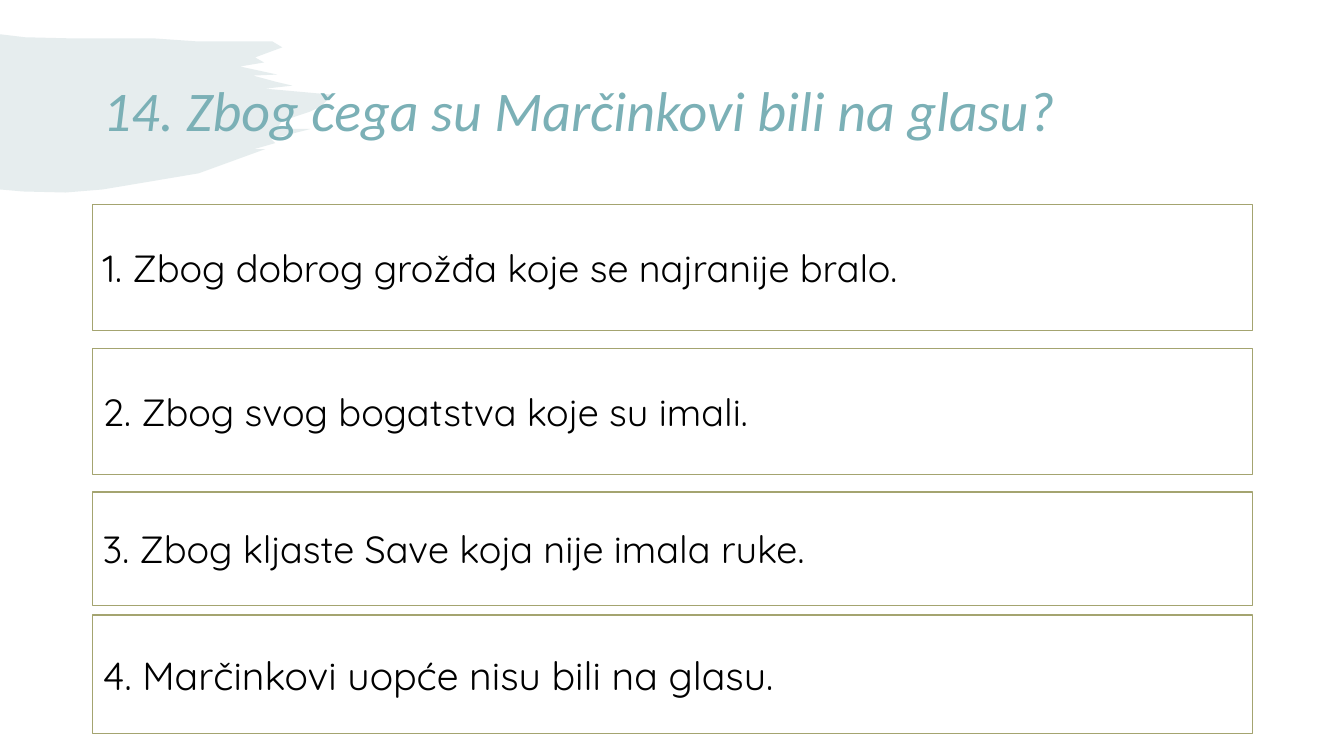
import pptx
import pptx.util
import pptx.oxml.ns
import pptx.dml.color
import pptx.enum.shapes
import pptx.enum.text
from lxml import etree

Inches = pptx.util.Inches
Pt = pptx.util.Pt
RGBColor = pptx.dml.color.RGBColor
qn = pptx.oxml.ns.qn

WHITE = RGBColor(0xFF, 0xFF, 0xFF)
BLACK = RGBColor(0x00, 0x00, 0x00)
TEAL = RGBColor(0x7B, 0xB0, 0xB6)
MIST = RGBColor(0x82, 0xA8, 0xAB)
OLIVE = RGBColor(0xA4, 0xA4, 0x70)
LEFT, WIDTH = 0.92, 11.5


def place(shape, left, top, width, height):
    shape.left, shape.top = Inches(left), Inches(top)
    shape.width, shape.height = Inches(width), Inches(height)


def write(shape, text, font, size, color):
    frame = shape.text_frame
    frame.word_wrap = True
    frame.auto_size = pptx.enum.text.MSO_AUTO_SIZE.NONE
    frame.vertical_anchor = pptx.enum.text.MSO_ANCHOR.MIDDLE
    para = frame.paragraphs[0]
    para.alignment = pptx.enum.text.PP_ALIGN.LEFT
    run = para.add_run()
    run.text = text
    run.font.name = font
    run.font.size = Pt(size)
    run.font.color.rgb = color
    return para


deck = pptx.Presentation()
deck.slide_width, deck.slide_height = Inches(13.33), Inches(7.5)
slide = deck.slides.add_slide(deck.slide_layouts[1])
slide.background.fill.solid()
slide.background.fill.fore_color.rgb = WHITE

edge = [
    (0.25, 0.37), (0.66, 0.38), (1.51, 0.38), (1.94, 0.41), (2.7, 0.41),
    (2.8, 0.47), (2.53, 0.57), (2.62, 0.62), (2.38, 0.66), (2.75, 0.74),
    (2.51, 0.75), (2.73, 0.81), (2.9, 0.85), (2.63, 0.88), (3.3, 0.94),
    (3.18, 1.06), (3.07, 1.11), (2.8, 1.2), (2.74, 1.28), (3.08, 1.28),
    (2.69, 1.38), (2.73, 1.42), (2.52, 1.48), (2.63, 1.48), (1.97, 1.72),
    (1.02, 1.88), (0.65, 1.91), (0.23, 1.9), (0, 1.88),
]
pen = slide.shapes.build_freeform(Inches(0), Inches(0.34))
pen.add_line_segments([(Inches(x), Inches(y)) for x, y in edge], close=True)
brush = pen.convert_to_shape()
brush.shadow.inherit = False
brush.fill.solid()
brush.fill.fore_color.rgb = MIST
tint = brush.element.xpath("./p:spPr/a:solidFill/a:srgbClr")[0]
etree.SubElement(tint, qn("a:alpha"), val="20000")
brush.line.fill.background()
slide.shapes._spTree.insert(2, brush.element)

title = slide.shapes.title
place(title, LEFT, 0.4, WIDTH, 1.45)
para = write(title, "14. Zbog čega su Marčinkovi bili na glasu?", "Calibri", 40, TEAL)
para.line_spacing = 0.9
para.runs[0].font.italic = True

body = slide.placeholders[1]
para = write(body, "4. Marčinkovi uopće nisu bili na glasu.", "Quicksand", 28, BLACK)
para.space_before = Pt(10)
props = para._p.get_or_add_pPr()
props.set("marL", "0")
props.set("indent", "0")
etree.SubElement(props, qn("a:buNone"))
boxes = [(body, 6.1, 1.18)]

answers = [
    ("1. Zbog dobrog grožđa koje se najranije bralo.", 2.03, 1.25),
    ("2. Zbog svog bogatstva koje su imali.", 3.46, 1.25),
    ("3. Zbog kljaste Save koja nije imala ruke.", 4.88, 1.13),
]
button = pptx.enum.shapes.MSO_SHAPE.ACTION_BUTTON_CUSTOM
for text, top, height in answers:
    box = slide.shapes.add_shape(button, 0, 0, Inches(1), Inches(1))
    box.shadow.inherit = False
    write(box, text, "Quicksand", 27, BLACK)
    boxes.append((box, top, height))

for box, top, height in boxes:
    place(box, LEFT, top, WIDTH, height)
    box.fill.solid()
    box.fill.fore_color.rgb = WHITE
    box.line.color.rgb = OLIVE
    box.line.width = Pt(1)

deck.save("out.pptx")
